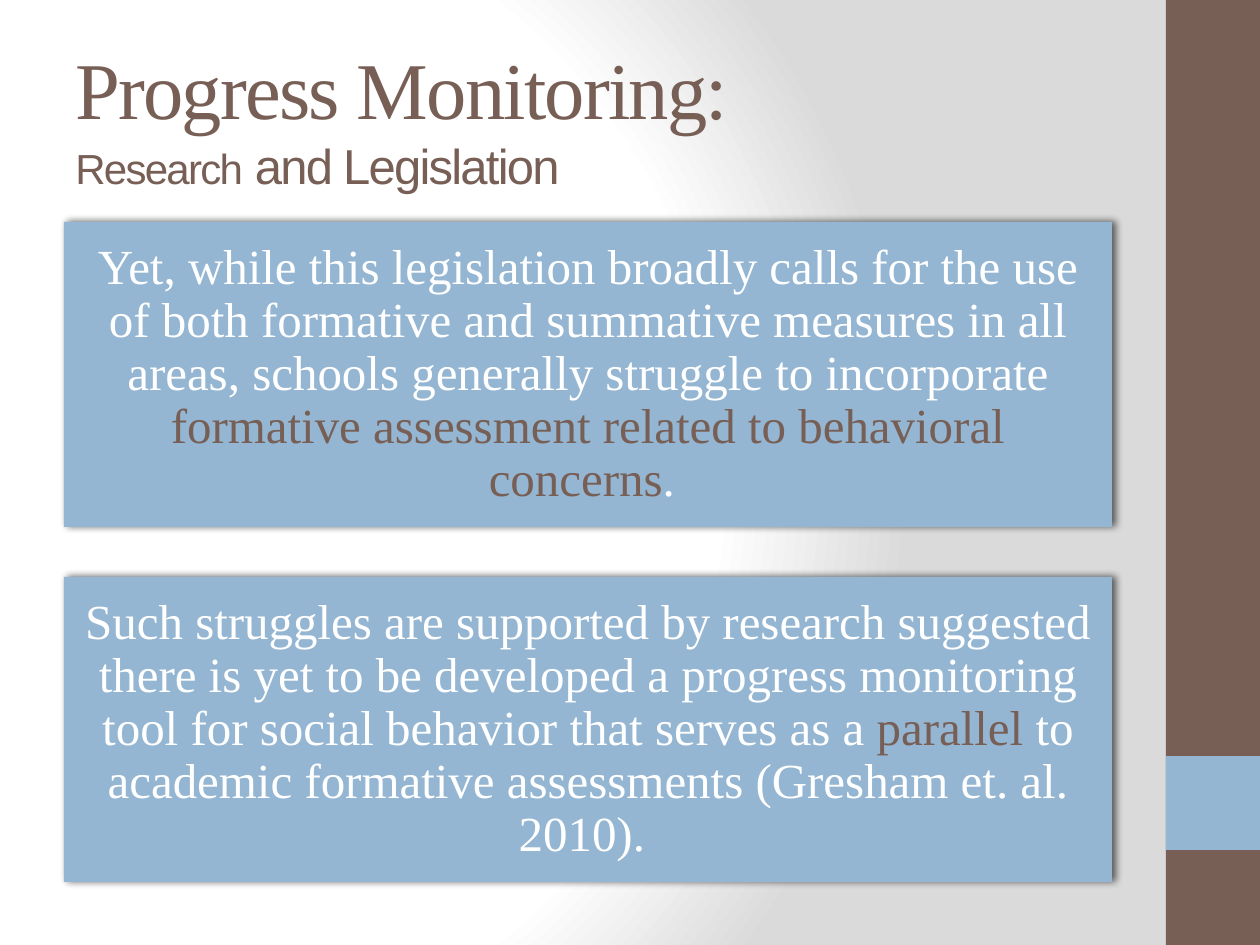
from dataclasses import dataclass

from lxml import etree
from pptx import Presentation, util as u
from pptx.dml.color import RGBColor
from pptx.enum import shapes, text
from pptx.oxml import parse_xml
from pptx.oxml.ns import nsdecls, qn


@dataclass(frozen=True)
class Theme:
    brown: str = "775F55"
    blue: str = "94B6D2"
    white: str = "FFFFFF"
    grey: str = "DADADA"
    black: str = "000000"
    serif: str = "Times New Roman"
    sans: str = "Arial"
    heading: int = 46
    subheading: int = 28
    small: int = 24
    body: int = 28


T = Theme()
PX = u.Inches(1) / 126
SLIDE = (1260, 945)

TITLE = [
    ("Progress Monitoring:", T.heading, T.serif),
    ("\n", T.heading, T.serif),
    ("Research", T.small, T.sans),
    (" and Legislation", T.subheading, T.sans),
]
TITLE_BOX = (63, 38, 1050, 158)

STATEMENTS = [
    [
        ("Yet, while this legislation broadly calls for the use of both formative "
         "and summative measures in all areas, schools generally struggle to "
         "incorporate ", T.white),
        ("formative assessment related to behavioral concerns", T.brown),
        (". ", T.white),
    ],
    [
        ("Such struggles are supported by research suggested there is yet to be "
         "developed a progress monitoring tool for social behavior that serves "
         "as a ", T.white),
        ("parallel", T.brown),
        (" to academic formative assessments (Gresham et. al. 2010). ", T.white),
    ],
]
PANEL = (64, 222, 1048, 305)
PANEL_PITCH = 355
PANEL_INSET = 15

SIDEBAR = [((1166, 0, 94, 945), T.brown), ((1166, 756, 94, 94), T.blue)]


def emu(px):
    return u.Emu(round(px * PX))


def set_all(target, values):
    for name, value in values.items():
        setattr(target, name, value)


def add_background(slide):
    stops = [(0, T.white), (75, T.white), (100, T.grey)]
    stop_xml = "".join(
        f'<a:gs pos="{pos * 1000}"><a:srgbClr val="{colour}"/></a:gs>'
        for pos, colour in stops)
    background = parse_xml(
        f'<p:bg {nsdecls("p", "a")}><p:bgPr><a:gradFill rotWithShape="1">'
        f'<a:gsLst>{stop_xml}</a:gsLst><a:path path="circle">'
        '<a:fillToRect l="20000" t="50000" r="100000" b="50000"/></a:path>'
        '</a:gradFill><a:effectLst/></p:bgPr></p:bg>')
    slide.element.cSld.insert(0, background)


def add_block(slide, box, colour):
    block = slide.shapes.add_shape(shapes.MSO_SHAPE.RECTANGLE, *map(emu, box))
    block.shadow.inherit = False
    block.fill.solid()
    block.fill.fore_color.rgb = RGBColor.from_string(colour)
    block.line.fill.background()
    return block


def add_shadow(block):
    effects = block.element.spPr.find(qn("a:effectLst"))
    shadow = etree.SubElement(
        effects, qn("a:outerShdw"), blurRad=str(u.Pt(4)), dist=str(u.Pt(2)),
        dir="0", rotWithShape="0")
    colour = etree.SubElement(shadow, qn("a:srgbClr"), val=T.black)
    etree.SubElement(colour, qn("a:alpha"), val="60000")


def add_run(paragraph, wording, size, face, colour):
    run = paragraph.add_run()
    run.text = wording
    set_all(run.font, {"size": u.Pt(size), "name": face})
    run.font.color.rgb = RGBColor.from_string(colour)
    return run


def add_title(slide):
    frame = slide.shapes.add_textbox(*map(emu, TITLE_BOX)).text_frame
    set_all(frame, {"word_wrap": True, "vertical_anchor": text.MSO_ANCHOR.MIDDLE})
    paragraph = frame.paragraphs[0]
    for wording, size, face in TITLE:
        if wording == "\n":
            paragraph.add_line_break()
            continue
        run = add_run(paragraph, wording, size, face, T.brown)
        run.font._element.set("spc", "-100")


def add_statement(slide, index, wording):
    left, top, width, height = PANEL
    panel = add_block(slide, (left, top + index * PANEL_PITCH, width, height), T.blue)
    add_shadow(panel)
    frame = panel.text_frame
    set_all(frame, {"word_wrap": True, "vertical_anchor": text.MSO_ANCHOR.MIDDLE})
    set_all(frame, {f"margin_{side}": emu(PANEL_INSET)
                    for side in ("left", "top", "right", "bottom")})
    paragraph = frame.paragraphs[0]
    set_all(paragraph, {"alignment": text.PP_ALIGN.CENTER, "line_spacing": 0.9})
    for part, colour in wording:
        add_run(paragraph, part, T.body, T.serif, colour)


def main():
    deck = Presentation()
    set_all(deck, dict(zip(("slide_width", "slide_height"), map(emu, SLIDE))))
    slide = deck.slides.add_slide(deck.slide_layouts[6])
    add_background(slide)
    for box, colour in SIDEBAR:
        add_block(slide, box, colour)
    add_title(slide)
    for index, wording in enumerate(STATEMENTS):
        add_statement(slide, index, wording)
    deck.save("out.pptx")


if __name__ == "__main__":
    main()
